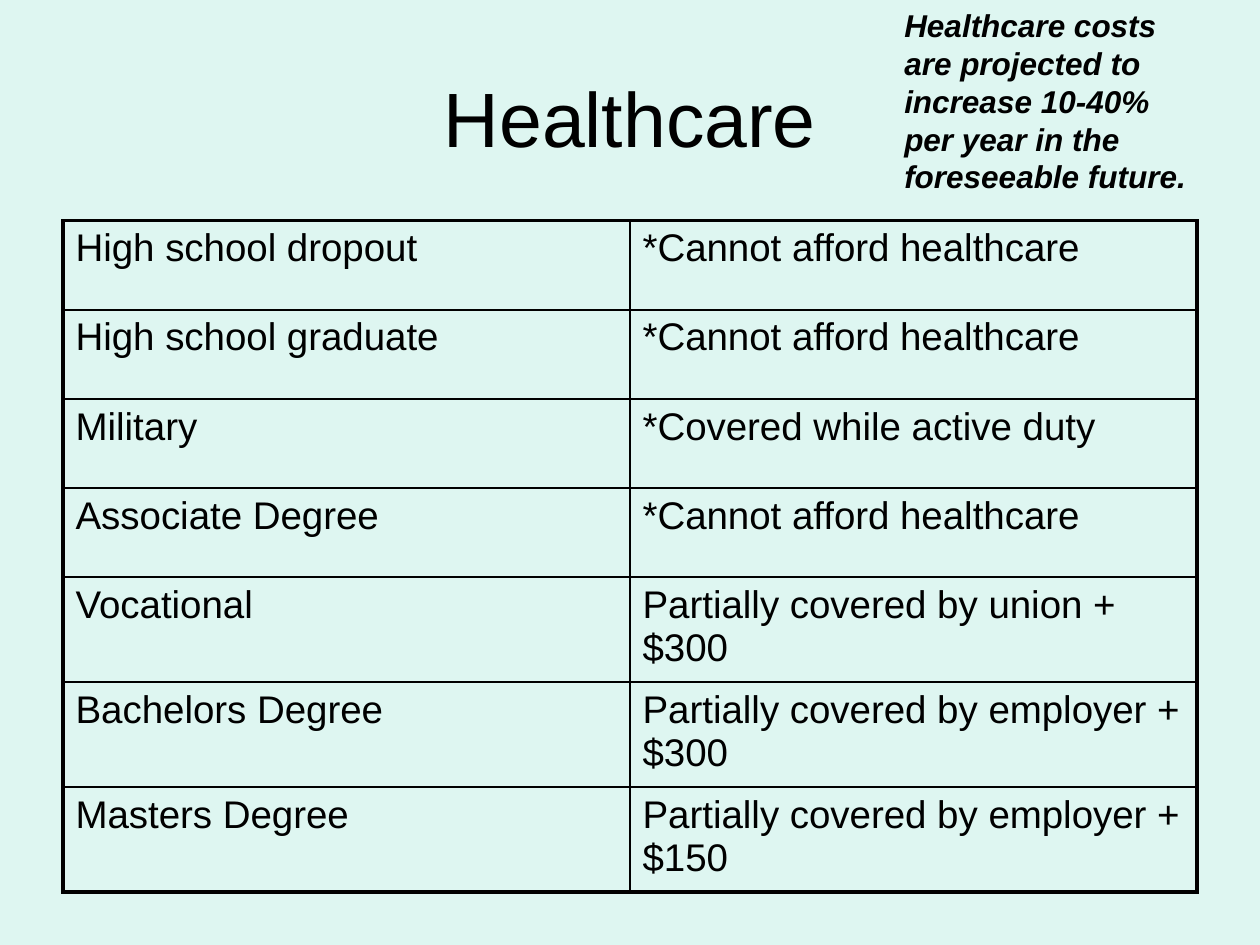
from lxml import etree
from pptx import Presentation
from pptx import util as u
from pptx.dml import color
from pptx.enum import text
from pptx.oxml import ns

BACKGROUND = "DEF6F1"
INK = "000000"
FONT = "Arial"
OUTER, INNER = 2.25, 1
COVERAGE = [
    ("High school dropout", "*Cannot afford healthcare"),
    ("High school graduate", "*Cannot afford healthcare"),
    ("Military", "*Covered while active duty"),
    ("Associate Degree", "*Cannot afford healthcare"),
    ("Vocational", "Partially covered by union + $300"),
    ("Bachelors Degree", "Partially covered by employer + $300"),
    ("Masters Degree", "Partially covered by employer + $150"),
]


def rgb(value):
    """Return the colour for a hex string."""
    return color.RGBColor.from_string(value)


def write(frame, words, size, align=text.PP_ALIGN.LEFT, anchor=text.MSO_ANCHOR.TOP,
          bold=False, italic=False):
    """Write one formatted paragraph into a text frame."""
    frame.word_wrap = True
    frame.vertical_anchor = anchor
    paragraph = frame.paragraphs[0]
    paragraph.alignment = align
    run = paragraph.add_run()
    run.text = words
    run.font.name = FONT
    run.font.size = u.Pt(size)
    run.font.bold = bold
    run.font.italic = italic
    run.font.color.rgb = rgb(INK)


def add_border(cell, side, width):
    """Draw a solid line along one side of a cell."""
    properties = cell._tc.get_or_add_tcPr()
    line = etree.SubElement(properties, ns.qn(f"a:ln{side}"), w=str(u.Pt(width)))
    fill = etree.SubElement(line, ns.qn("a:solidFill"))
    etree.SubElement(fill, ns.qn("a:srgbClr"), val=INK)


def add_title(slide, left, top, width, height):
    """Place the centred slide title."""
    title = slide.shapes.add_textbox(left, top, width, height)
    write(title.text_frame, "Healthcare", 44, align=text.PP_ALIGN.CENTER,
          anchor=text.MSO_ANCHOR.MIDDLE)


def add_cost_note(slide, left, top, width, height):
    """Place the remark on rising costs."""
    note = slide.shapes.add_textbox(left, top, width, height)
    write(note.text_frame, "Healthcare costs are projected to increase 10-40% per year "
          "in the foreseeable future.", 18, bold=True, italic=True)
    note.text_frame.auto_size = text.MSO_AUTO_SIZE.SHAPE_TO_FIT_TEXT


def add_coverage_table(slide, left, top, width, height):
    """Place the table of coverage by education, with a heavy outer frame."""
    rows, columns = len(COVERAGE), len(COVERAGE[0])
    table = slide.shapes.add_table(rows, columns, left, top, width, height).table
    table.first_row = False
    table.horz_banding = False
    for row, entries in enumerate(COVERAGE):
        for column, entry in enumerate(entries):
            cell = table.cell(row, column)
            write(cell.text_frame, entry, 22)
            on_edge = {"L": column == 0, "R": column == columns - 1,
                       "T": row == 0, "B": row == rows - 1}
            for side, outer in on_edge.items():
                add_border(cell, side, OUTER if outer else INNER)
            cell.fill.background()


def main():
    """Build the slide and save it."""
    deck = Presentation()
    deck.slide_width, deck.slide_height = u.Cm(25.4), u.Cm(19.05)
    slide = deck.slides.add_slide(deck.slide_layouts[6])
    slide.background.fill.solid()
    slide.background.fill.fore_color.rgb = rgb(BACKGROUND)
    margin, content = u.Cm(1.27), u.Cm(22.86)
    add_title(slide, margin, u.Cm(0.76), content, u.Cm(3.18))
    add_coverage_table(slide, margin, u.Cm(4.45), content, u.Cm(12.57))
    add_cost_note(slide, u.Cm(17.98), u.Cm(0), u.Cm(6.4), u.Cm(4.06))
    deck.save("out.pptx")


if __name__ == "__main__":
    main()
